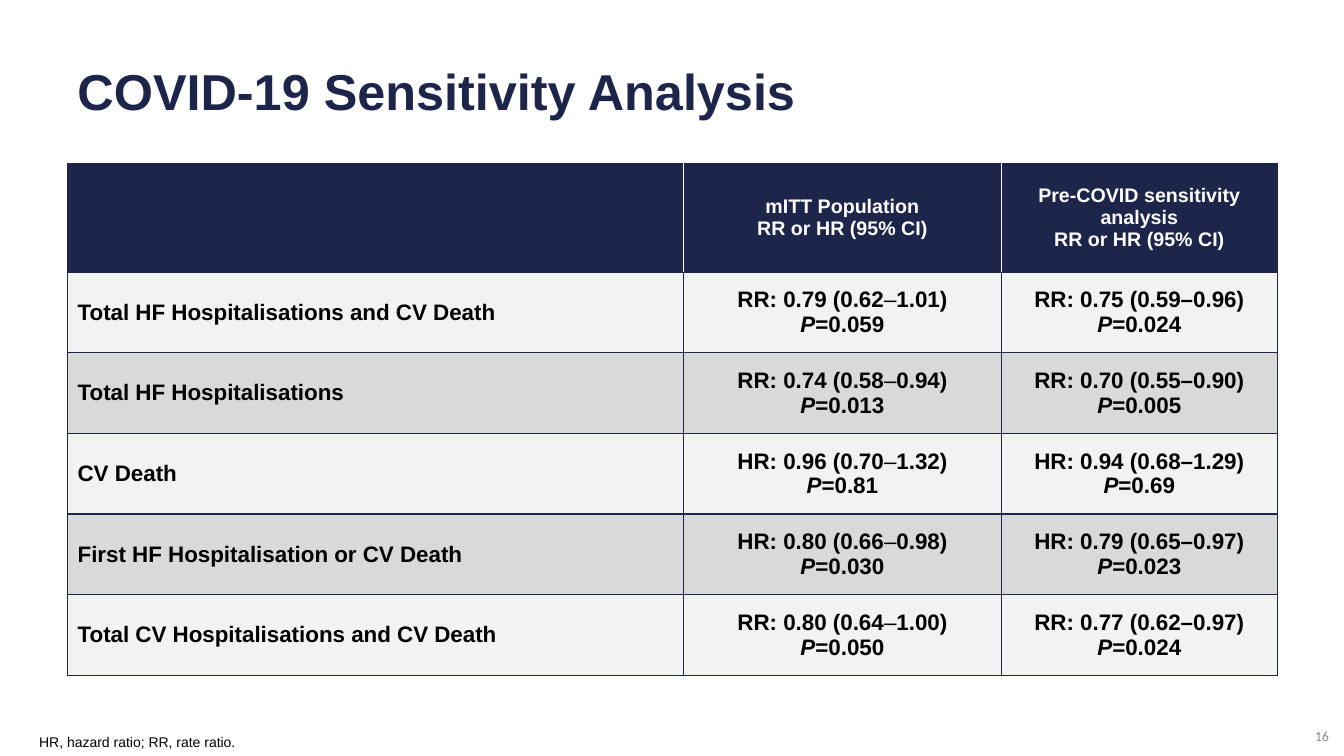
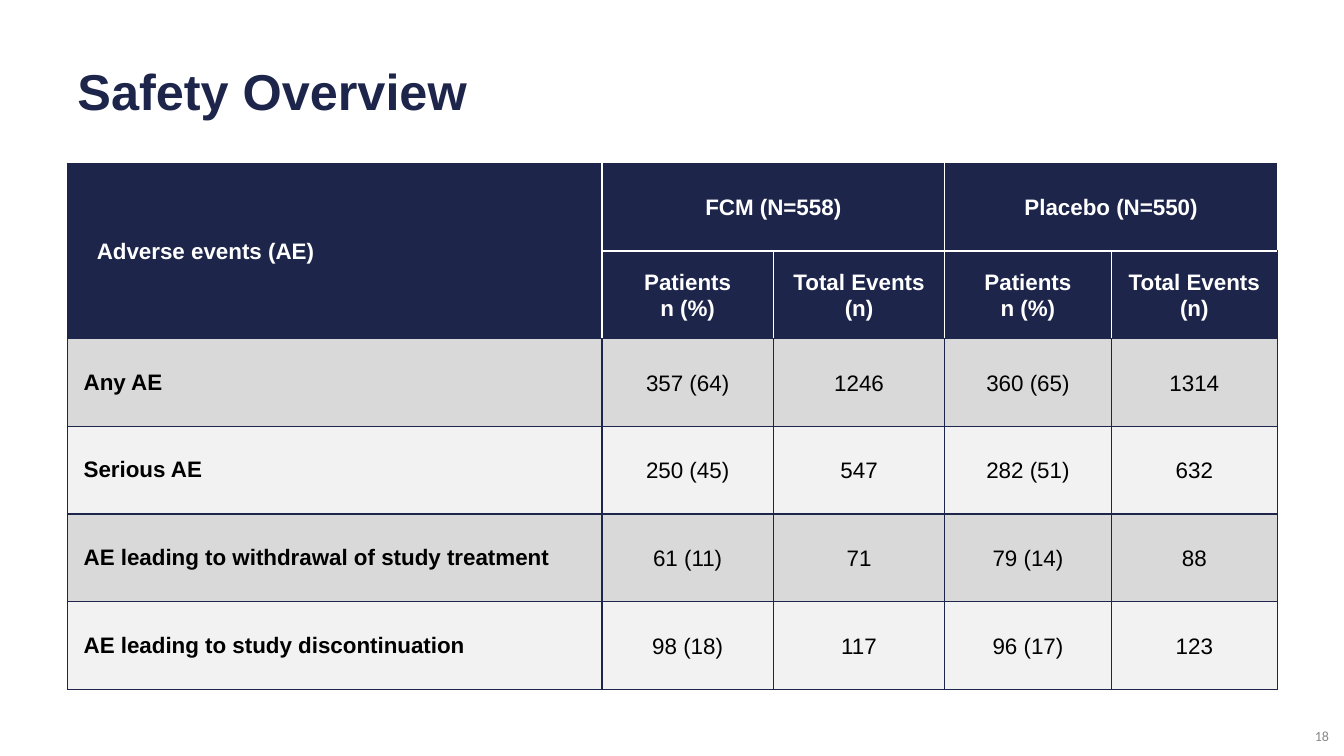
from dataclasses import dataclass
from itertools import groupby
from typing import NamedTuple

from lxml import etree
from pptx import Presentation
from pptx.dml.color import RGBColor
from pptx.enum.text import MSO_ANCHOR, PP_ALIGN
from pptx.oxml.ns import qn
from pptx.util import Inches, Pt

LEFT, MID, RIGHT = PP_ALIGN.LEFT, PP_ALIGN.CENTER, PP_ALIGN.RIGHT
CENTRE, BOTTOM = MSO_ANCHOR.MIDDLE, MSO_ANCHOR.BOTTOM

WIDE, HIGH = 13.33, 7.5
EDGE, TOP = 0.67, 1.62  # the table grid has twelve columns of one inch
SPAN = 12
NAVY, WHITE, BLACK, GREY = "1D254B", "FFFFFF", "000000", "898989"
BANDS = ("D9D9D9", "F2F2F2")


class Box(NamedTuple):
    left: float
    top: float
    width: float
    height: float


class Look(NamedTuple):
    size: int
    color: str = BLACK
    bold: bool = False
    align: PP_ALIGN = LEFT
    font: str = "Arial"
    space: float = 1.0
    thin: str = ""
    slant: str = ""


class Merge(NamedTuple):
    top: int
    left: int
    bottom: int
    right: int


@dataclass
class Page:
    title: str
    number: int
    cols: tuple[float, ...]
    rows: tuple[float, ...]
    cells: list[tuple[str, ...]]
    heads: int
    head: Look
    label: Look
    data: tuple[Look, ...]
    pad: float
    shifts: tuple[float, float] = (0, 0)
    merges: tuple[Merge, ...] = ()
    note: str = ""


TITLE = Look(36, NAVY, True)
FOOT = Look(10, GREY, align=RIGHT, font="Calibri")
NOTE = Look(10)
BOLD = Look(16, bold=True)
RATIO = BOLD._replace(align=MID, slant="P")
COUNT = Look(16, align=MID, space=1.07)

PAGES = [
    Page(
        "COVID-19 Sensitivity Analysis", 16,
        cols=(6.11, 3.15, 2.74),
        rows=(1.08,) + (0.8,) * 5,
        cells=[
            ("", "mITT Population\nRR or HR (95% CI)",
             "Pre-COVID sensitivity analysis\nRR or HR (95% CI)"),
            ("Total HF Hospitalisations and CV Death",
             "RR: 0.79 (0.62–1.01)\nP=0.059", "RR: 0.75 (0.59–0.96)\nP=0.024"),
            ("Total HF Hospitalisations",
             "RR: 0.74 (0.58–0.94)\nP=0.013", "RR: 0.70 (0.55–0.90)\nP=0.005"),
            ("CV Death",
             "HR: 0.96 (0.70–1.32)\nP=0.81", "HR: 0.94 (0.68–1.29)\nP=0.69"),
            ("First HF Hospitalisation or CV Death",
             "HR: 0.80 (0.66–0.98)\nP=0.030", "HR: 0.79 (0.65–0.97)\nP=0.023"),
            ("Total CV Hospitalisations and CV Death",
             "RR: 0.80 (0.64–1.00)\nP=0.050", "RR: 0.77 (0.62–0.97)\nP=0.024"),
        ],
        heads=1,
        head=Look(14, WHITE, True, MID),
        label=BOLD,
        data=(RATIO._replace(thin="–"), RATIO),
        pad=0.1,
        note="HR, hazard ratio; RR, rate ratio.",
    ),
    Page(
        "Safety Overview", 18,
        cols=(5.3, 1.7, 1.7, 1.65, 1.65),
        rows=(0.87,) * 6,
        cells=[
            ("Adverse events (AE)", "FCM (N=558)", "", "Placebo (N=550)", ""),
            ("",) + ("Patients\nn (%)", "Total Events (n)") * 2,
            ("Any AE", "357 (64)", "1246", "360 (65)", "1314"),
            ("Serious AE", "250 (45)", "547", "282 (51)", "632"),
            ("AE leading to withdrawal of study treatment",
             "61 (11)", "71", "79 (14)", "88"),
            ("AE leading to study discontinuation",
             "98 (18)", "117", "96 (17)", "123"),
        ],
        heads=2,
        head=Look(16, WHITE, True, MID, space=1.07),
        label=BOLD,
        data=(COUNT,) * 4,
        pad=0,
        shifts=(0.19, 0.06),
        merges=(Merge(0, 0, 1, 0), Merge(0, 1, 0, 2), Merge(0, 3, 0, 4)),
    ),
]


def paint(code: str) -> RGBColor:
    return RGBColor.from_string(code)


def write(frame, text: str, look: Look) -> None:
    """Fill a frame line by line, with thin and slanted characters in own runs."""
    marks = look.thin + look.slant
    for i, line in enumerate(text.split("\n")):
        par = frame.add_paragraph() if i else frame.paragraphs[0]
        par.alignment = look.align
        par.line_spacing = look.space
        for mark, part in groupby(line, lambda ch: ch if ch in marks else ""):
            run = par.add_run()
            run.text = "".join(part)
            font = run.font
            font.name, font.size = look.font, Pt(look.size)
            font.color.rgb = paint(look.color)
            font.bold = look.bold and not (mark and mark in look.thin)
            font.italic = bool(mark) and mark in look.slant


def label(slide, box: Box, text: str, look: Look, anchor=CENTRE) -> None:
    frame = slide.shapes.add_textbox(*map(Inches, box)).text_frame
    frame.word_wrap = True
    frame.vertical_anchor = anchor
    write(frame, text, look)


def rule(cell, side: str, color: str) -> None:
    """Draw one border of a cell; side is L, R, T or B."""
    line = etree.SubElement(cell._tc.get_or_add_tcPr(), qn(f"a:ln{side}"),
                            w=str(Pt(1)))
    fill = etree.SubElement(line, qn("a:solidFill"))
    etree.SubElement(fill, qn("a:srgbClr"), val=color)


def edges(page: Page, row: int, col: int) -> dict[str, str]:
    """White between header cells, navy elsewhere."""
    top = row < page.heads
    white = {
        "L": top and col > 0,
        "R": top and col < len(page.cols) - 1,
        "T": top and row > 0 and col > 0,
        "B": row < page.heads - 1 and col > 0,
    }
    return {side: WHITE if on else NAVY for side, on in white.items()}


def style(page: Page, row: int, col: int) -> Look:
    if row < page.heads:
        return page.head if col else page.head._replace(align=LEFT)
    return page.data[col - 1] if col else page.label


def grid(slide, page: Page) -> None:
    box = Box(EDGE, TOP, SPAN, sum(page.rows))
    table = slide.shapes.add_table(len(page.rows), len(page.cols),
                                   *map(Inches, box)).table
    table.horz_banding = False
    for col, width in zip(table.columns, page.cols):
        col.width = Inches(width)
    for row, height in zip(table.rows, page.rows):
        row.height = Inches(height)
    for m in page.merges:
        table.cell(m.top, m.left).merge(table.cell(m.bottom, m.right))
    for r, texts in enumerate(page.cells):
        top = r < page.heads
        for c, text in enumerate(texts):
            cell = table.cell(r, c)
            shift = 0 if c else page.shifts[0 if top else 1]
            cell.margin_left = Inches(0.1 + shift)
            cell.margin_right = Inches(0.1)
            cell.margin_top = cell.margin_bottom = Inches(page.pad)
            cell.vertical_anchor = CENTRE
            for side, color in edges(page, r, c).items():
                rule(cell, side, color)
            cell.fill.solid()
            cell.fill.fore_color.rgb = paint(NAVY if top else BANDS[r % 2])
            write(cell.text_frame, text, style(page, r, c))


def main() -> None:
    deck = Presentation()
    deck.slide_width, deck.slide_height = Inches(WIDE), Inches(HIGH)
    for page in PAGES:
        slide = deck.slides.add_slide(deck.slide_layouts[6])
        label(slide, Box(EDGE, 0.52, SPAN, 0.75), page.title, TITLE)
        label(slide, Box(12.05, 7.18, 1.23, 0.25), str(page.number), FOOT)
        grid(slide, page)
        if page.note:
            label(slide, Box(0.29, 6.88, 12.61, 0.61), page.note, NOTE, BOTTOM)
    deck.save("out.pptx")


if __name__ == "__main__":
    main()
